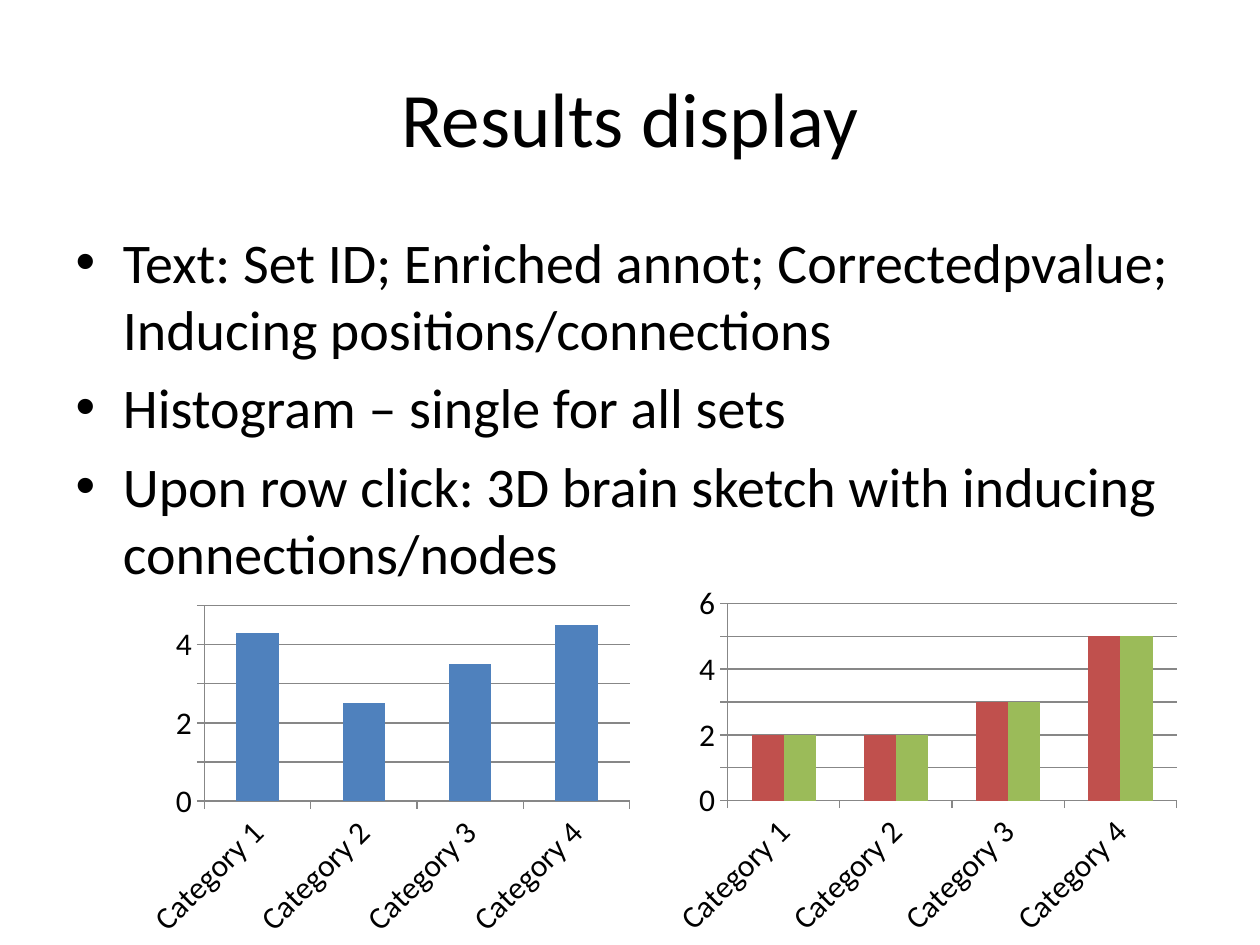
from dataclasses import dataclass

from pptx import Presentation
from pptx.chart.data import CategoryChartData
from pptx.dml.color import RGBColor
from pptx.enum.chart import XL_CHART_TYPE, XL_TICK_MARK
from pptx.enum.text import MSO_ANCHOR, PP_ALIGN
from pptx.util import Cm, Pt

COLUMNS = XL_CHART_TYPE.COLUMN_CLUSTERED
TICK_OUT = XL_TICK_MARK.OUTSIDE
TICK_NONE = XL_TICK_MARK.NONE
MIDDLE = MSO_ANCHOR.MIDDLE
CENTER, LEFT = PP_ALIGN.CENTER, PP_ALIGN.LEFT


@dataclass(frozen=True)
class Theme:
    font: str = "Calibri"
    text: RGBColor = RGBColor(0x00, 0x00, 0x00)
    line: RGBColor = RGBColor(0x87, 0x87, 0x87)
    blue: RGBColor = RGBColor(0x4F, 0x81, 0xBD)
    red: RGBColor = RGBColor(0xC0, 0x50, 0x4D)
    green: RGBColor = RGBColor(0x9B, 0xBB, 0x59)
    title_size: int = 44
    body_size: int = 32
    chart_size: int = 18


@dataclass(frozen=True)
class Box:
    """Left, top, width and height in centimetres."""
    x: float
    y: float
    w: float
    h: float

    def lengths(self) -> tuple:
        return Cm(self.x), Cm(self.y), Cm(self.w), Cm(self.h)


@dataclass(frozen=True)
class Series:
    name: str
    values: tuple
    color: RGBColor


@dataclass(frozen=True)
class Histogram:
    box: Box
    maximum: int
    series: tuple


THEME = Theme()
TITLE_BOX = Box(1.27, 0.76, 22.86, 3.18)
BODY_BOX = Box(1.27, 4.45, 22.86, 12.57)
TITLE = "Results display"
BULLETS = (
    "Text: Set ID; Enriched annot; Correctedpvalue; Inducing positions/connections",
    "Histogram – single for all sets",
    "Upon row click: 3D brain sketch with inducing connections/nodes",
)
CATEGORIES = [f"Category {n}" for n in range(1, 5)]
PAIRED_VALUES = (2, 2, 3, 5)
HISTOGRAMS = (
    Histogram(Box(2.74, 12.07, 10.16, 6.98), 5,
              (Series("Series 1", (4.3, 2.5, 3.5, 4.5), THEME.blue),)),
    Histogram(Box(13.34, 11.63, 10.59, 7.42), 6,
              (Series("Series 1", PAIRED_VALUES, THEME.red),
               Series("Series 2", PAIRED_VALUES, THEME.green))),
)


def style_font(font, size: int) -> None:
    font.name = THEME.font
    font.size = Pt(size)
    font.color.rgb = THEME.text


def fill_placeholder(sp, box: Box, lines: tuple, size: int, align) -> None:
    sp.left, sp.top, sp.width, sp.height = box.lengths()
    tf = sp.text_frame
    for i, line in enumerate(lines):
        p = tf.add_paragraph() if i else tf.paragraphs[0]
        p.alignment = align
        r = p.add_run()
        r.text = line
        style_font(r.font, size)


def style_line(line) -> None:
    line.color.rgb = THEME.line
    line.width = Pt(0.75)


def add_histogram(s, spec: Histogram) -> None:
    data = CategoryChartData()
    data.categories = CATEGORIES
    for item in spec.series:
        data.add_series(item.name, item.values)
    chart = s.shapes.add_chart(COLUMNS, *spec.box.lengths(), data).chart
    chart.has_legend = False
    chart.has_title = False
    style_font(chart.font, THEME.chart_size)

    # Columns
    plot = chart.plots[0]
    plot.vary_by_categories = False
    plot.gap_width = 150
    plot.overlap = 0
    for series, item in zip(plot.series, spec.series):
        series.format.fill.solid()
        series.format.fill.fore_color.rgb = item.color

    # Axes and gridlines
    for axis in (chart.category_axis, chart.value_axis):
        axis.major_tick_mark = TICK_OUT
        axis.minor_tick_mark = TICK_NONE
        style_line(axis.format.line)
        style_font(axis.tick_labels.font, THEME.chart_size)
    values = chart.value_axis
    values.minimum_scale, values.maximum_scale = 0, spec.maximum
    values.major_unit = 1
    values.has_major_gridlines = True
    style_line(values.major_gridlines.format.line)

    # Slanted category labels, in 60000ths of a degree
    labels = chart.category_axis.tick_labels.font
    body = chart.category_axis._element.txPr.bodyPr
    body.set("rot", str(-45 * 60000))
    labels.bold = False


def main() -> None:
    prs = Presentation()
    prs.slide_width, prs.slide_height = Cm(25.4), Cm(19.05)
    s = prs.slides.add_slide(prs.slide_layouts[1])

    # Title and list
    title, body = s.shapes.title, s.placeholders[1]
    fill_placeholder(title, TITLE_BOX, (TITLE,), THEME.title_size, CENTER)
    title.text_frame.vertical_anchor = MIDDLE
    fill_placeholder(body, BODY_BOX, BULLETS, THEME.body_size, LEFT)

    # Charts
    for spec in HISTOGRAMS:
        add_histogram(s, spec)

    prs.save("out.pptx")


if __name__ == "__main__":
    main()
